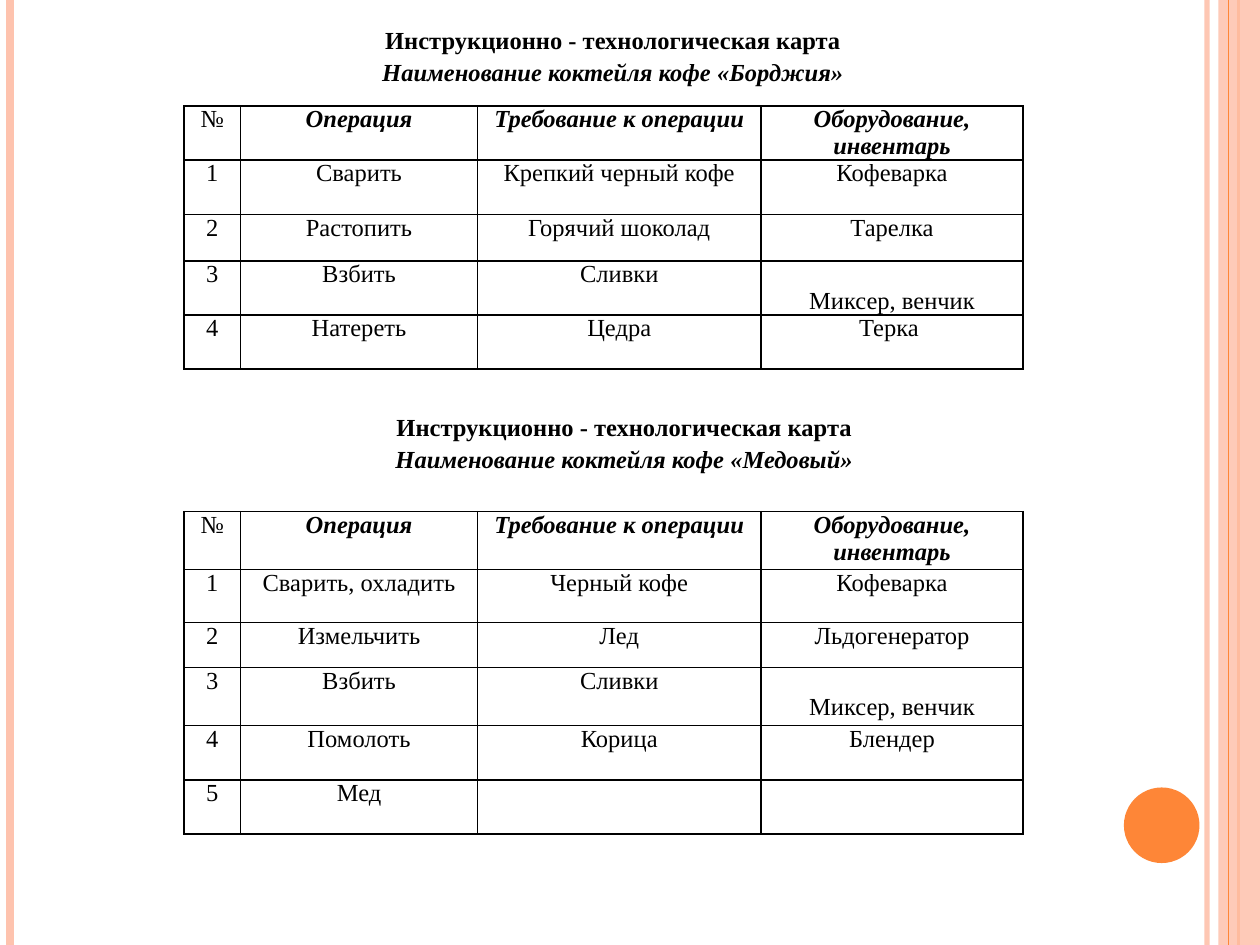
"""Build a slide with two recipe cards for coffee cocktails."""
from lxml import etree
from pptx import Presentation
from pptx.dml.color import RGBColor
from pptx.enum.shapes import MSO_CONNECTOR, MSO_SHAPE
from pptx.enum.text import MSO_ANCHOR, MSO_AUTO_SIZE, PP_ALIGN
from pptx.oxml.ns import qn
from pptx.util import Inches, Pt

STRAIGHT = MSO_CONNECTOR.STRAIGHT
RECTANGLE, OVAL = MSO_SHAPE.RECTANGLE, MSO_SHAPE.OVAL
TOP, CENTER = MSO_ANCHOR.TOP, PP_ALIGN.CENTER
NO_AUTOFIT = MSO_AUTO_SIZE.NONE

BLACK = RGBColor(0x00, 0x00, 0x00)
PEACH = RGBColor(0xFE, 0xC3, 0xAE)
ORANGE = RGBColor(0xFE, 0x86, 0x37)
FONT, TEXT_SIZE = "Times New Roman", 14

SLIDE_WIDTH, SLIDE_HEIGHT = 10, 7.5
TABLE_LEFT = 1.46
COLUMN_WIDTHS = [0.45, 1.88, 2.25, 2.08]
LINE_HEIGHT = 0.21
LOWERED = "Миксер, венчик"

HEADING = "Инструкционно - технологическая карта"
HEADER = ["№", "Операция", "Требование к операции", "Оборудование, инвентарь"]

CARDS = [
    {
        "name": "Наименование коктейля кофе «Борджия»",
        "title_box": (1.38, 0.12, 6.97, 0.88),
        "title_inset": 0.08,
        "table_top": 0.84,
        "row_heights": [0.43, 0.43, 0.37, 0.43, 0.43],
        "steps": [
            ("Сварить", "Крепкий черный кофе", "Кофеварка"),
            ("Растопить", "Горячий шоколад", "Тарелка"),
            ("Взбить", "Сливки", LOWERED),
            ("Натереть", "Цедра", "Терка "),
        ],
    },
    {
        "name": "Наименование коктейля кофе «Медовый»",
        "title_box": (3.03, 2.96, 3.85, 1.11),
        "title_inset": 0.31,
        "table_top": 4.06,
        "row_heights": [0.46, 0.42, 0.36, 0.46, 0.43, 0.43],
        "steps": [
            ("Сварить, охладить", "Черный кофе", "Кофеварка"),
            ("Измельчить", "Лед", "Льдогенератор"),
            ("Взбить", "Сливки", LOWERED),
            ("Помолоть", "Корица", "Блендер"),
            ("Мед", "", ""),
        ],
    },
]

STRIPES_BEHIND = [(9.58, PEACH, 3, 93), (0.08, PEACH, 4.5, 100), (9.83, ORANGE, 1.5, 100)]
STRIPE_IN_FRONT = (9.75, ORANGE, 0.75, 100)
BAND = (RECTANGLE, (9.67, 0, 0.33, SLIDE_HEIGHT), PEACH, 87)
DISC = (OVAL, (8.92, 6.25, 0.6, 0.6), ORANGE, 100)


def set_opacity(owner, percent):
    if percent < 100:
        color = next(owner.iter(qn("a:srgbClr")))
        etree.SubElement(color, qn("a:alpha"), val=str(percent * 1000))


def add_stripe(slide, x, color, width, opacity):
    stripe = slide.shapes.add_connector(
        STRAIGHT, Inches(x), Inches(0), Inches(x), Inches(SLIDE_HEIGHT))
    stripe.line.color.rgb = color
    stripe.line.width = Pt(width)
    properties = stripe._element.spPr
    set_opacity(properties, opacity)
    etree.SubElement(properties, qn("a:effectLst"))


def add_ornament(slide, preset, box, color, opacity):
    ornament = slide.shapes.add_shape(preset, *map(Inches, box))
    ornament.shadow.inherit = False
    ornament.fill.solid()
    ornament.fill.fore_color.rgb = color
    ornament.line.fill.background()
    set_opacity(ornament._element.spPr, opacity)


def write(paragraph, text, bold=False, italic=False):
    paragraph.alignment = CENTER
    paragraph.font.size = Pt(TEXT_SIZE)
    if text:
        run = paragraph.add_run()
        run.text = text
        run.font.name = FONT
        run.font.size = Pt(TEXT_SIZE)
        run.font.bold = bold
        run.font.italic = italic
        run.font.color.rgb = BLACK


def fill_title(title, card):
    title.left, title.top, title.width, title.height = map(Inches, card["title_box"])
    frame = title.text_frame
    frame.word_wrap = True
    frame.auto_size = NO_AUTOFIT
    frame.vertical_anchor = TOP
    frame.margin_top = Inches(card["title_inset"])
    write(frame.paragraphs[0], HEADING, bold=True)
    name_line = frame.add_paragraph()
    name_line.space_before = Pt(1.4)
    write(name_line, card["name"], bold=True, italic=True)


def set_borders(cell):
    properties = cell._tc.get_or_add_tcPr()
    for index, side in enumerate(("lnL", "lnR", "lnT", "lnB")):
        border = etree.Element(qn(f"a:{side}"), w=str(Pt(1)))
        fill = etree.SubElement(border, qn("a:solidFill"))
        etree.SubElement(fill, qn("a:srgbClr"), val=str(BLACK))
        properties.insert(index, border)


def add_steps_table(slide, card):
    rows = [HEADER] + [(str(n), *step) for n, step in enumerate(card["steps"], 1)]
    heights = card["row_heights"]
    table = slide.shapes.add_table(
        len(rows), len(HEADER), Inches(TABLE_LEFT), Inches(card["table_top"]),
        Inches(sum(COLUMN_WIDTHS)), Inches(sum(heights))).table
    table.first_row = table.horz_banding = False
    for column, width in zip(table.columns, COLUMN_WIDTHS):
        column.width = Inches(width)
    for r, (values, height) in enumerate(zip(rows, heights)):
        table.rows[r].height = Inches(height)
        for c, value in enumerate(values):
            cell = table.cell(r, c)
            cell.margin_left = cell.margin_right = Inches(0.07)
            cell.margin_top = Inches(LINE_HEIGHT if value == LOWERED else 0)
            cell.margin_bottom = 0
            cell.fill.background()
            set_borders(cell)
            emphasised = r == 0 and c > 0
            write(cell.text_frame.paragraphs[0], value, emphasised, emphasised)


def main():
    presentation = Presentation()
    presentation.slide_width = Inches(SLIDE_WIDTH)
    presentation.slide_height = Inches(SLIDE_HEIGHT)
    slide = presentation.slides.add_slide(presentation.slide_layouts[5])
    for stripe in STRIPES_BEHIND:
        add_stripe(slide, *stripe)
    add_ornament(slide, *BAND)
    add_stripe(slide, *STRIPE_IN_FRONT)
    add_ornament(slide, *DISC)
    second_title = slide.shapes.add_textbox(*map(Inches, CARDS[1]["title_box"]))
    for card, title in zip(CARDS, (slide.shapes.title, second_title)):
        fill_title(title, card)
        add_steps_table(slide, card)
    presentation.save("out.pptx")


if __name__ == "__main__":
    main()
